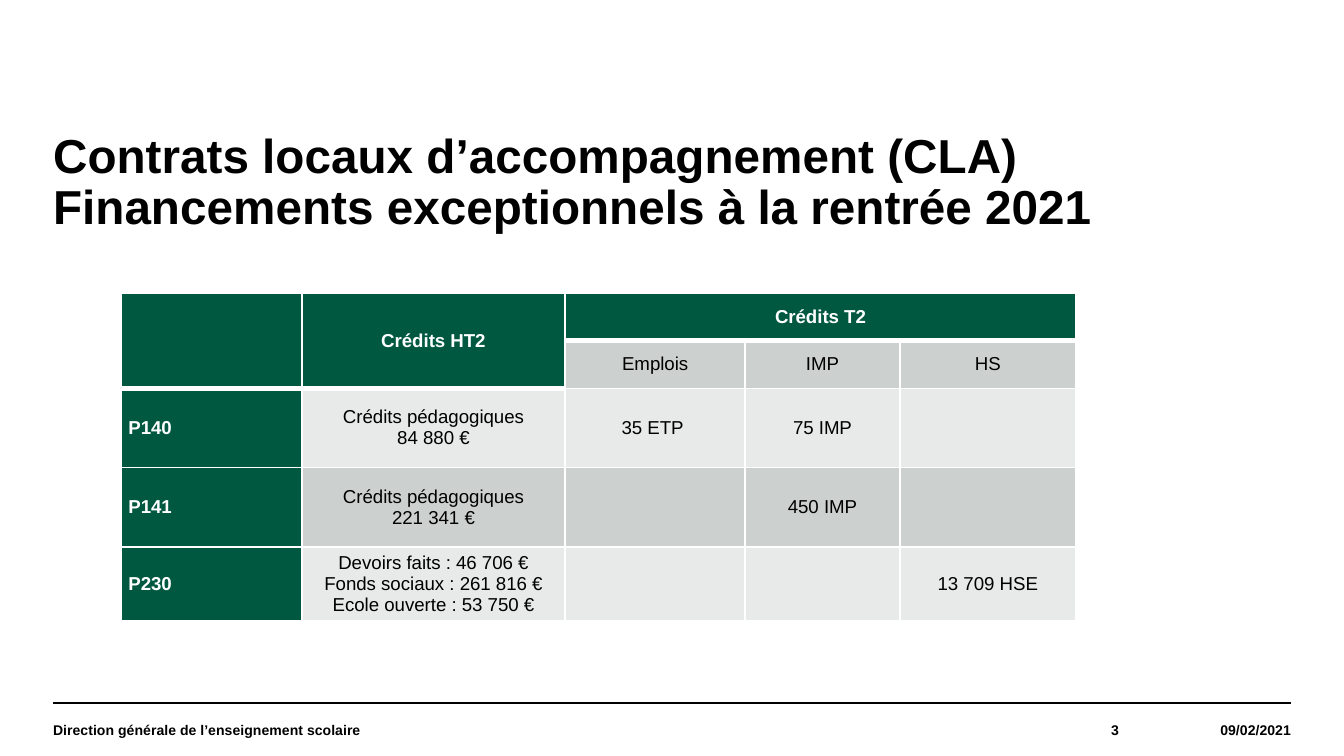
from dataclasses import dataclass

from lxml import etree
from pptx import Presentation
from pptx import util as u
from pptx.dml.color import RGBColor
from pptx.enum import shapes, text
from pptx.oxml import ns


@dataclass(frozen=True)
class Theme:
    font: str = "Arial"
    black: str = "000000"
    white: str = "FFFFFF"
    green: str = "005841"
    light: str = "E7EAE9"
    grey: str = "CCD1CF"
    title_size: float = 25.5
    table_size: float = 10
    footer_size: float = 7.5
    thin: float = 1
    thick: float = 3


THEME = Theme()
PX = 4572  # 200 px to the inch
ALIGN = text.PP_ALIGN

COLUMNS = [268, 392, 268, 230, 262]
ROWS = [71, 71, 118, 118, 110]
CELLS = [
    ["", "Crédits HT2", "Crédits T2", "", ""],
    ["", "", "Emplois", "IMP", "HS"],
    ["P140", "Crédits pédagogiques\n84 880 €", "35 ETP\u00a0", "75 IMP", ""],
    ["P141", "Crédits pédagogiques\n221 341 €", "", "450 IMP", ""],
    ["P230", "Devoirs faits : 46 706 €\nFonds sociaux : 261 816 €\n"
     "Ecole ouverte : 53 750 €", "", "", "13 709 HSE"],
]


def px(*lengths):
    return [u.Emu(length * PX) for length in lengths]


def format_text(text_frame, size, color, bold, align):
    for paragraph in text_frame.paragraphs:
        paragraph.alignment = align
        for run in paragraph.runs:
            run.font.name = THEME.font
            run.font.size = u.Pt(size)
            run.font.bold = bold
            run.font.color.rgb = RGBColor.from_string(color)


def add_text(slide, box, content, size, align=ALIGN.LEFT,
             anchor=text.MSO_ANCHOR.MIDDLE):
    frame = slide.shapes.add_textbox(*px(*box)).text_frame
    frame.word_wrap = True
    frame.margin_left = frame.margin_right = 0
    frame.margin_top = frame.margin_bottom = 0
    frame.vertical_anchor = anchor
    frame.text = content
    format_text(frame, size, THEME.black, True, align)
    return frame


def add_title(slide, box):
    frame = add_text(slide, box, "Contrats locaux d’accompagnement (CLA)\v"
                     "Financements exceptionnels à la rentrée 2021",
                     THEME.title_size, anchor=text.MSO_ANCHOR.TOP)
    frame.paragraphs[0].line_spacing = 0.9


def set_borders(cell, widths):
    """Draw white borders; widths are left, right, top, bottom in points."""
    properties = cell._tc.get_or_add_tcPr()
    for side, width in zip("LRTB", widths):
        line = etree.SubElement(properties, ns.qn(f"a:ln{side}"),
                                w=str(u.Pt(width)))
        fill = etree.SubElement(line, ns.qn("a:solidFill"))
        etree.SubElement(fill, ns.qn("a:srgbClr"), val=THEME.white)


def format_cell(cell, row, column):
    last_header = 1 if column < 2 else 0
    is_header = row <= last_header
    is_strong = is_header or column == 0
    top = THEME.thick if row == last_header + 1 else THEME.thin
    bottom = THEME.thick if is_header else THEME.thin
    set_borders(cell, (THEME.thin, THEME.thin, top, bottom))
    band = THEME.grey if row % 2 else THEME.light
    cell.fill.solid()
    cell.fill.fore_color.rgb = RGBColor.from_string(
        THEME.green if is_strong else band)
    cell.margin_left = cell.margin_right = u.Emu(10 * PX)
    cell.margin_top = cell.margin_bottom = 0
    cell.vertical_anchor = text.MSO_ANCHOR.MIDDLE
    cell.text_frame.text = CELLS[row][column]
    align = ALIGN.JUSTIFY if column == 0 else ALIGN.CENTER
    format_text(cell.text_frame, THEME.table_size,
                THEME.white if is_strong else THEME.black, is_strong, align)


def add_funding_table(slide, left, top):
    box = px(left, top, sum(COLUMNS), sum(ROWS))
    table = slide.shapes.add_table(len(ROWS), len(COLUMNS), *box).table
    table.first_row = table.horz_banding = False
    for column, width in zip(table.columns, px(*COLUMNS)):
        column.width = width
    for row, height in zip(table.rows, px(*ROWS)):
        row.height = height
    for row in range(len(ROWS)):
        for column in range(len(COLUMNS)):
            format_cell(table.cell(row, column), row, column)
    for column in (0, 1):
        table.cell(0, column).merge(table.cell(1, column))
    table.cell(0, 2).merge(table.cell(0, 4))


def add_footer(slide, box):
    """Place a rule along the top of the box and three texts below it."""
    left, top, width, height = box
    rule = slide.shapes.add_connector(shapes.MSO_CONNECTOR.STRAIGHT,
                                      *px(left, top, left + width, top))
    rule.line.color.rgb = RGBColor.from_string(THEME.black)
    rule.line.width = u.Pt(0.8)
    etree.SubElement(rule._element.spPr, ns.qn("a:effectLst"))
    parts = [
        ("Direction générale de l’enseignement scolaire", 1290, ALIGN.LEFT),
        ("3", 296, ALIGN.RIGHT),
        ("09/02/2021", 256, ALIGN.RIGHT),
    ]
    for content, part_width, align in parts:
        add_text(slide, (left, top, part_width, height), content,
                 THEME.footer_size, align)
        left += part_width


def main():
    presentation = Presentation()
    presentation.slide_width, presentation.slide_height = px(2000, 1125)
    slide = presentation.slides.add_slide(presentation.slide_layouts[6])
    add_title(slide, (79, 197, 1842, 158))
    add_funding_table(slide, 181, 436)
    add_footer(slide, (79, 1046, 1842, 79))
    presentation.save("out.pptx")


if __name__ == "__main__":
    main()
